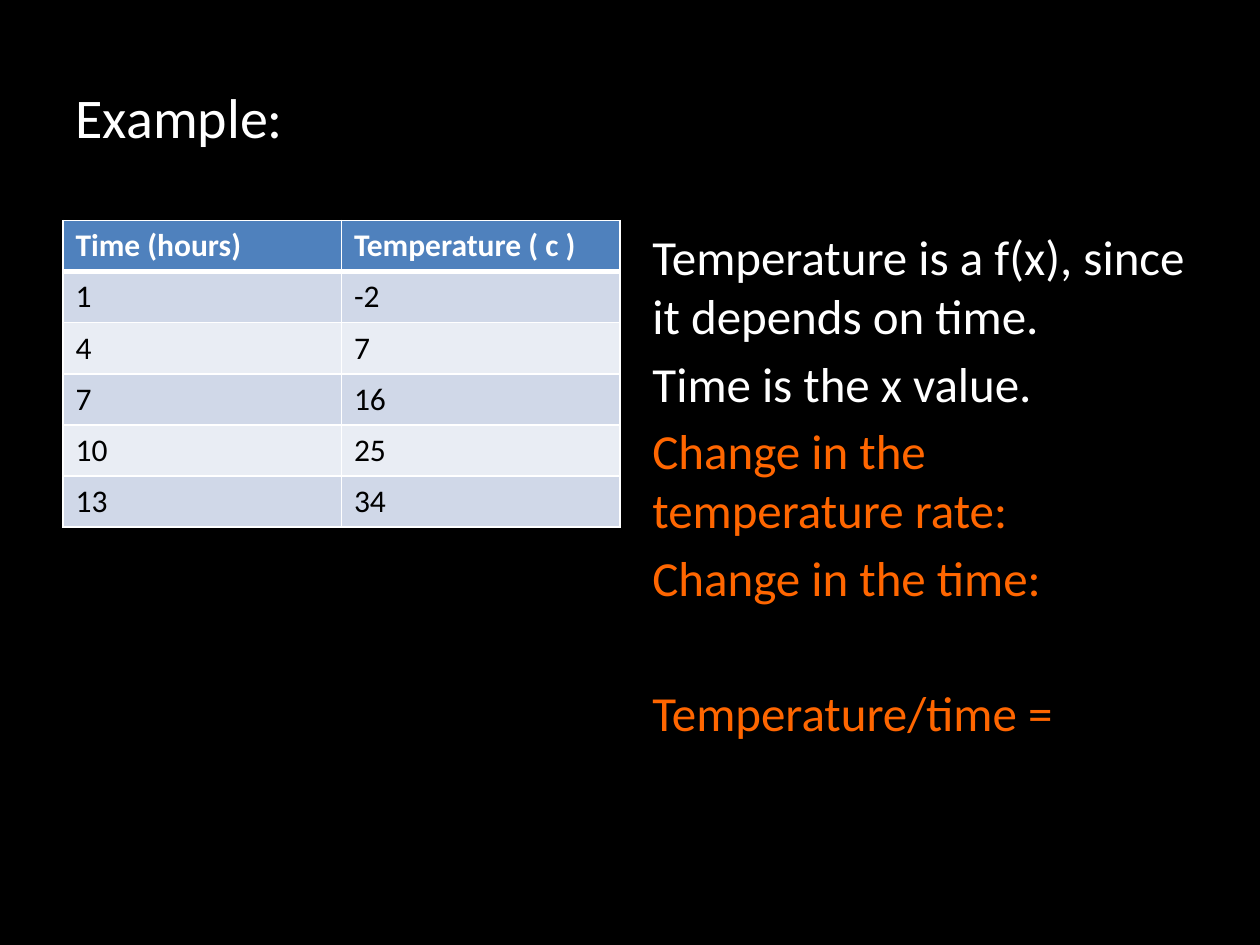
from pptx import Presentation
from pptx.dml.color import RGBColor
from pptx.enum.text import MSO_ANCHOR as Anchor, PP_ALIGN as Align
from pptx.oxml import parse_xml
from pptx.oxml.ns import nsdecls
from pptx.util import Inches, Pt

FONT = "Calibri"
WHITE, BLACK, ORANGE = "FFFFFF", "000000", "FF6600"
HEADER_FILL, BAND_FILLS = "4F81BD", ("D0D8E8", "E9EDF4")

READINGS = [
    ("Time (hours)", "Temperature ( c )"),
    ("1", "-2"),
    ("4", "7"),
    ("7", "16"),
    ("10", "25"),
    ("13", "34"),
]
LINE_GAP, BLANK_LINE_GAP = 5, 44
NOTES = [
    ("Temperature is a f(x), since it depends on time.", WHITE, LINE_GAP),
    ("Time is the x value.", WHITE, LINE_GAP),
    ("Change in the temperature rate:", ORANGE, LINE_GAP),
    ("Change in the time:", ORANGE, LINE_GAP),
    ("Temperature/time =", ORANGE, BLANK_LINE_GAP),
]


def paint(target, color):
    target.solid()
    target.fore_color.rgb = RGBColor.from_string(color)


def add_run(paragraph, text, size, color, bold=False):
    run = paragraph.add_run()
    run.text = text
    run.font.name = FONT
    run.font.size = Pt(size)
    run.font.bold = bold
    run.font.color.rgb = RGBColor.from_string(color)


def set_borders(cell, color, top, bottom):
    widths = {"lnL": 1, "lnR": 1, "lnT": top, "lnB": bottom}
    for position, (side, width) in enumerate(widths.items()):
        border = parse_xml(
            f'<a:{side} {nsdecls("a")} w="{Pt(width)}"><a:solidFill>'
            f'<a:srgbClr val="{color}"/></a:solidFill></a:{side}>'
        )
        cell._tc.get_or_add_tcPr().insert(position, border)


def place_title(slide, left, top, width, height):
    title = slide.shapes.title
    title.left, title.top, title.width, title.height = left, top, width, height
    title.text_frame.vertical_anchor = Anchor.MIDDLE
    paragraph = title.text_frame.paragraphs[0]
    paragraph.alignment = Align.LEFT
    add_run(paragraph, "Example:", 32, WHITE)


def add_readings(slide, left, top, width, height):
    row_count, column_count = len(READINGS), len(READINGS[0])
    table = slide.shapes.add_table(
        row_count, column_count, left, top, width, height
    ).table
    for column in table.columns:
        column.width = width // column_count
    for r, reading in enumerate(READINGS):
        table.rows[r].height = height // row_count
        is_header = r == 0
        for c, text in enumerate(reading):
            cell = table.cell(r, c)
            paint(cell.fill, HEADER_FILL if is_header else BAND_FILLS[(r - 1) % 2])
            set_borders(cell, WHITE, 3 if r == 1 else 1, 3 if is_header else 1)
            add_run(cell.text_frame.paragraphs[0], text, 18,
                    WHITE if is_header else BLACK, is_header)


def add_notes(slide, left, top, width, height):
    frame = slide.shapes.add_textbox(left, top, width, height).text_frame
    frame.word_wrap = True
    for i, (text, color, gap) in enumerate(NOTES):
        paragraph = frame.add_paragraph() if i else frame.paragraphs[0]
        paragraph.space_before = Pt(gap)
        add_run(paragraph, text, 28, color)


def main():
    deck = Presentation()
    deck.slide_width, deck.slide_height = Inches(10), Inches(7.5)
    slide = deck.slides.add_slide(deck.slide_layouts.get_by_name("Title Only"))
    paint(slide.background.fill, BLACK)
    place_title(slide, Inches(0.5), Inches(0.3), Inches(9), Inches(1.25))
    add_readings(slide, Inches(0.5), Inches(1.75), Inches(4.42), Inches(2.43))
    add_notes(slide, Inches(5.08), Inches(1.75), Inches(4.42), Inches(4.95))
    deck.save("out.pptx")


if __name__ == "__main__":
    main()
